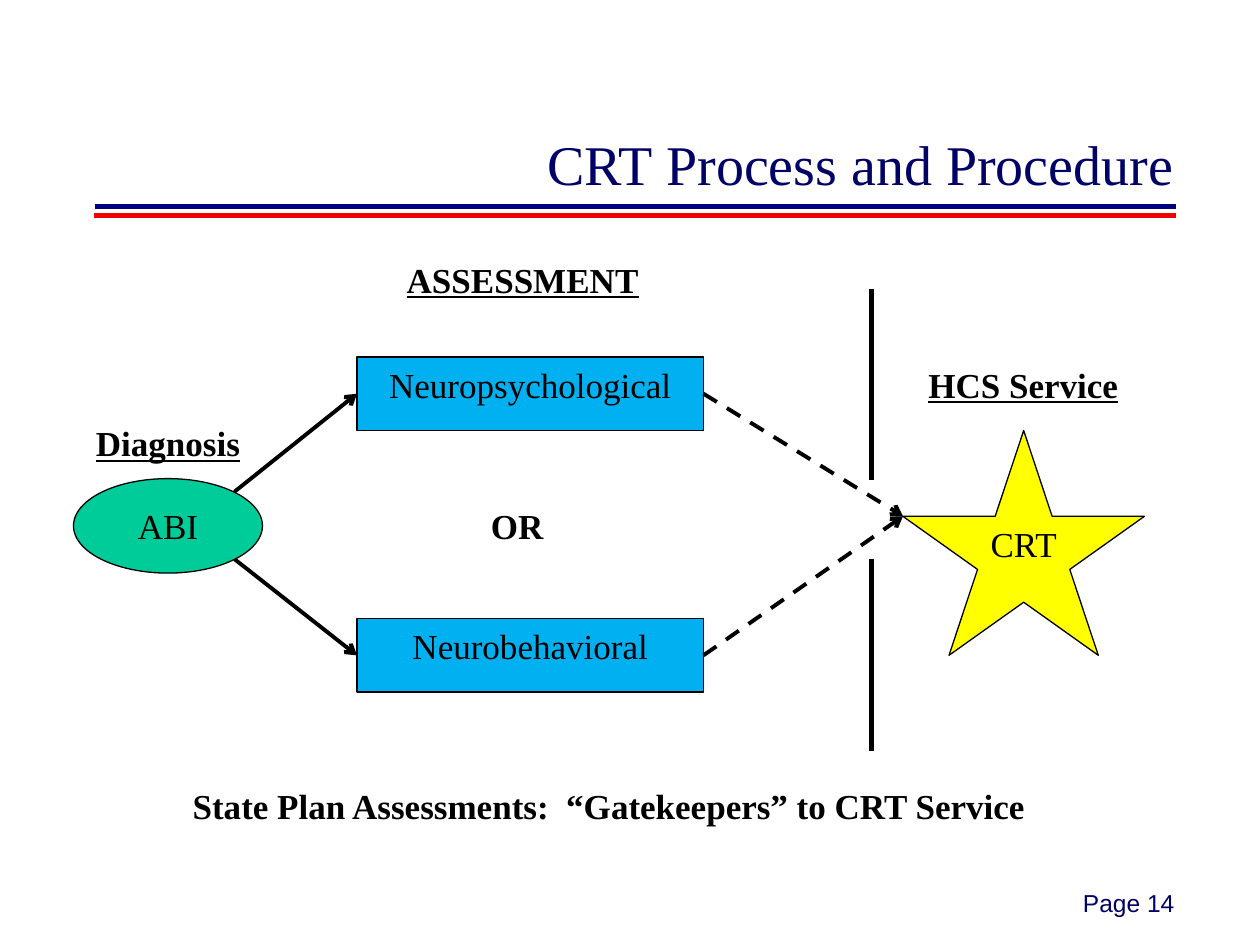
from pptx import Presentation
from pptx.dml.color import RGBColor
from pptx.enum.dml import MSO_LINE as Dash
from pptx.enum.shapes import MSO_CONNECTOR as Conn, MSO_SHAPE as Kind
from pptx.enum.text import MSO_ANCHOR as Anchor, MSO_AUTO_SIZE as Fit, PP_ALIGN as Align
from pptx.oxml.ns import qn
from pptx.util import Pt
from lxml import etree

BLACK = RGBColor(0, 0, 0)
NAVY = RGBColor(0, 0, 0x66)
BLUE = RGBColor(0, 0, 0x80)
RED = RGBColor(0xF0, 0, 0)
GREEN = RGBColor(0, 0xCC, 0x99)
SKY = RGBColor(0, 0xB0, 0xF0)
YELLOW = RGBColor(0xFF, 0xFF, 0)
SERIF = "Times New Roman"


def write(frame, text, size=20, name=SERIF, color=BLACK, align=Align.CENTER):
    frame.text = text
    para = frame.paragraphs[0]
    para.alignment = align
    font = para.font
    font.size, font.name, font.color.rgb = Pt(size), name, color
    return font


def draw(x1, y1, x2, y2, color=BLACK, width=3, dash=None, arrow=False):
    line = slide.shapes.add_connector(Conn.STRAIGHT, Pt(x1), Pt(y1), Pt(x2), Pt(y2))
    line.line.color.rgb, line.line.width = color, Pt(width)
    if dash:
        line.line.dash_style = dash
    if arrow:
        etree.SubElement(line.line._get_or_add_ln(), qn("a:tailEnd"), type="arrow")
    etree.SubElement(line._element.spPr, qn("a:effectLst"))


deck = Presentation()
deck.slide_width, deck.slide_height = Pt(720), Pt(540)
slide = deck.slides.add_slide(deck.slide_layouts[5])

# Title and its double rule
title = slide.shapes.title
title.left, title.top, title.width, title.height = Pt(66), Pt(72), Pt(612), Pt(42)
frame = title.text_frame
write(frame, "CRT Process and Procedure", 32, color=NAVY, align=Align.RIGHT)
frame.auto_size, frame.vertical_anchor = Fit.NONE, Anchor.MIDDLE
draw(54, 118.2, 672, 118.2, BLUE)
draw(53.5, 123.3, 672, 123.3, RED)

# Diagnosis, two assessments and the service
shapes = [
    (Kind.OVAL, 42, 273.5, 108, 54, GREEN, ""),
    (Kind.RECTANGLE, 204, 204, 198, 42, SKY, "Neuropsychological"),
    (Kind.RECTANGLE, 204, 353.5, 198, 42, SKY, "Neurobehavioral"),
    (Kind.STAR_5_POINT, 516, 246, 138, 128.5, YELLOW, "CRT"),
]
for kind, x, y, w, h, color, text in shapes:
    shape = slide.shapes.add_shape(kind, Pt(x), Pt(y), Pt(w), Pt(h))
    shape.shadow.inherit = False
    shape.fill.solid()
    shape.fill.fore_color.rgb = color
    shape.line.color.rgb, shape.line.width = BLACK, Pt(0.75)
    if text:
        frame = shape.text_frame
        frame.word_wrap, frame.vertical_anchor = False, Anchor.TOP
        write(frame, text)

# Labels: text, left, top, width, bold, underline
labels = [
    ("ABI", 66, 284.5, 60, False, False),
    ("ASSESSMENT", 222, 144, 150, True, True),
    ("OR", 268.5, 284.5, 54, True, False),
    ("Diagnosis", 36, 237.5, 120, True, True),
    ("HCS Service", 516, 204, 137.5, True, True),
    ("State Plan Assessments:  “Gatekeepers” to CRT Service", 96, 445, 504, True, False),
]
for text, x, y, w, bold, under in labels:
    frame = slide.shapes.add_textbox(Pt(x), Pt(y), Pt(w), Pt(31.5)).text_frame
    frame.word_wrap = True
    align = Align.RIGHT if text == "ASSESSMENT" else Align.CENTER
    font = write(frame, text, align=align)
    font.bold, font.underline = bold, under

# Arrows through each assessment to the service
for start, mid in ((281, 225), (319.5, 374.5)):
    draw(134, start, 204, mid, width=2.25, arrow=True)
    draw(402, mid, 516, 295, width=2.25, dash=Dash.DASH, arrow=True)

# Gate with an opening
for top in (165, 319.5):
    draw(498, top, 498, top + 109.5)

# Page number
frame = slide.shapes.add_textbox(Pt(570), Pt(504), Pt(150), Pt(36)).text_frame
frame.word_wrap = True
write(frame, "Page 14", 14, "Arial", NAVY)

deck.save("out.pptx")
